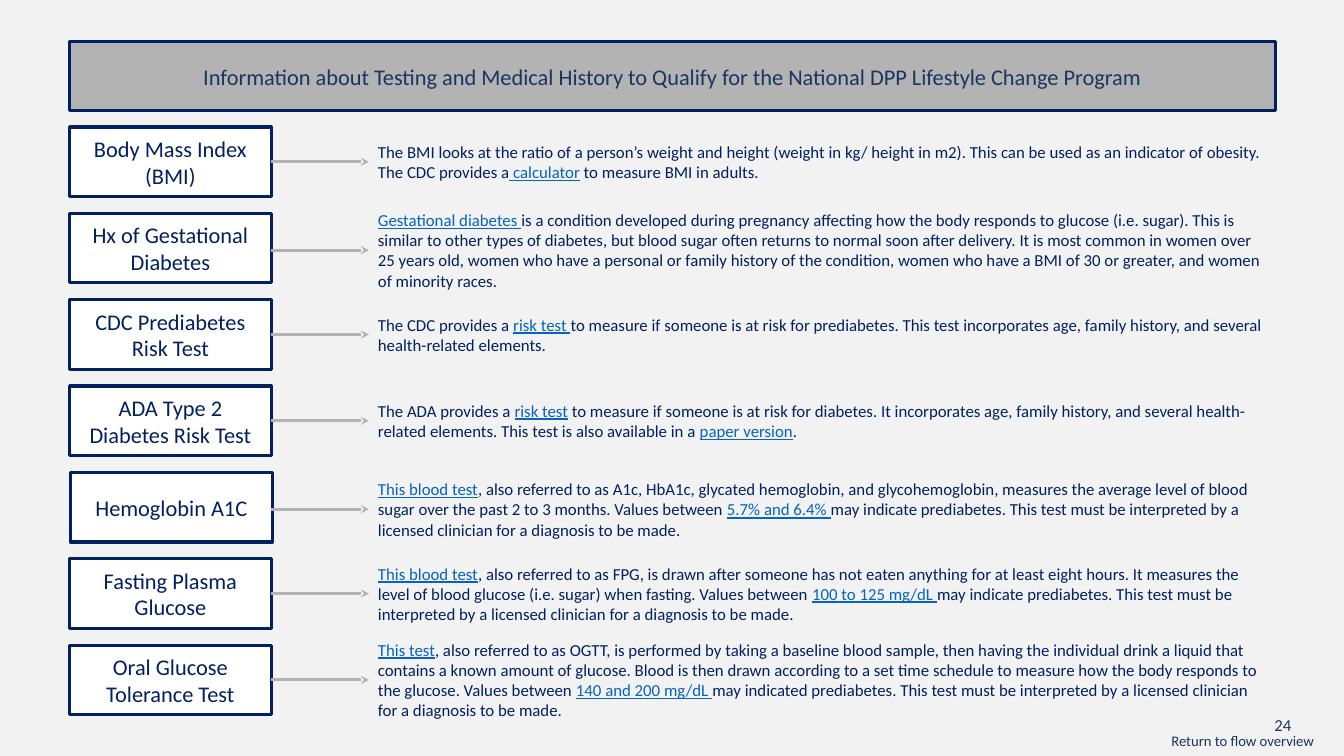
from lxml.etree import SubElement
from pptx import Presentation
from pptx.dml.color import RGBColor
from pptx.enum.shapes import MSO_CONNECTOR, MSO_SHAPE
from pptx.enum.text import MSO_ANCHOR, MSO_AUTO_SIZE, PP_ALIGN
from pptx.oxml.ns import qn
from pptx.util import Inches, Pt

COLORS = {
    "background": "F2F2F2",
    "navy": "002060",
    "title": "193560",
    "number": "203864",
    "gray": "B3B3B3",
    "white": "FFFFFF",
    "link": "0563C1",
}

LEFT, TOP, BOX_W, ROW_H = 0.69, 1.26, 2, 0.69
PITCH = (6.4 - TOP) / 6
TEXT_LEFT, TEXT_W = 3.65, 8.99

TITLE = "Information about Testing and Medical History to Qualify for the National DPP Lifestyle Change Program"

ROWS = [
    ("Body Mass Index (BMI)", 0, 0,
     "The BMI looks at the ratio of a person’s weight and height (weight in kg/ height in m2). "
     "This can be used as an indicator of obesity. The CDC provides a[ calculator] to measure BMI in adults."),
    ("Hx of Gestational Diabetes", 0, 0.02,
     "[Gestational diabetes ]is a condition developed during pregnancy affecting how the body responds "
     "to glucose (i.e. sugar). This is similar to other types of diabetes, but blood sugar often returns "
     "to normal soon after delivery. It is most common in women over 25 years old, women who have a "
     "personal or family history of the condition, women who have a BMI of 30 or greater, and women of "
     "minority races."),
    ("CDC Prediabetes Risk Test", 0, 0,
     "The CDC provides a [risk test ]to measure if someone is at risk for prediabetes. This test "
     "incorporates age, family history, and several health-related elements."),
    ("ADA Type 2 Diabetes Risk Test", 0, 0,
     "The ADA provides a [risk test] to measure if someone is at risk for diabetes. It incorporates age, "
     "family history, and several health-related elements. This test is also available in a [paper version]."),
    ("Hemoglobin A1C", 0.01, 0.02,
     "[This blood test], also referred to as A1c, HbA1c, glycated hemoglobin, and glycohemoglobin, "
     "measures the average level of blood sugar over the past 2 to 3 months. Values between "
     "[5.7% and 6.4% ]may indicate prediabetes. This test must be interpreted by a licensed clinician "
     "for a diagnosis to be made."),
    ("Fasting Plasma Glucose", 0, 0,
     "[This blood test], also referred to as FPG, is drawn after someone has not eaten anything for at "
     "least eight hours. It measures the level of blood glucose (i.e. sugar) when fasting. Values between "
     "[100 to 125 mg/dL ]may indicate prediabetes. This test must be interpreted by a licensed clinician "
     "for a diagnosis to be made."),
    ("Oral Glucose Tolerance Test", 0, 0,
     "[This test], also referred to as OGTT, is performed by taking a baseline blood sample, then having "
     "the individual drink a liquid that contains a known amount of glucose. Blood is then drawn according "
     "to a set time schedule to measure how the body responds to the glucose. Values between "
     "[140 and 200 mg/dL ]may indicated prediabetes. This test must be interpreted by a licensed clinician "
     "for a diagnosis to be made."),
]


class SlideBuilder:
    font = "Calibri"

    def __init__(self, s):
        self.s = s
        s.background.fill.solid()
        s.background.fill.fore_color.rgb = self.color("background")

    def color(self, name):
        return RGBColor.from_string(COLORS[name])

    def style(self, r, size, color):
        r.font.name = self.font
        r.font.size = Pt(size)
        r.font.color.rgb = self.color(color)

    def panel(self, sp, text, fill, color):
        sp.fill.solid()
        sp.fill.fore_color.rgb = self.color(fill)
        sp.line.color.rgb = self.color("navy")
        sp.line.width = Pt(2.25)
        tf = sp.text_frame
        tf.text = text
        tf.word_wrap = True
        tf.auto_size = MSO_AUTO_SIZE.NONE
        tf.vertical_anchor = MSO_ANCHOR.MIDDLE
        p = tf.paragraphs[0]
        p.alignment = PP_ALIGN.CENTER
        p.line_spacing = 1.0
        self.style(p.runs[0], 16, color)

    def title(self, x, y, w, h, text):
        sp = self.s.shapes.title
        sp.left, sp.top, sp.width, sp.height = map(Inches, (x, y, w, h))
        self.panel(sp, text, "gray", "title")

    def box(self, x, y, w, h, text):
        sp = self.s.shapes.add_shape(MSO_SHAPE.RECTANGLE, *map(Inches, (x, y, w, h)))
        sp.shadow.inherit = False
        self.panel(sp, text, "white", "navy")

    def description(self, x, y, w, h, text):
        tf = self.s.shapes.add_textbox(*map(Inches, (x, y, w, h))).text_frame
        tf.word_wrap = True
        tf.vertical_anchor = MSO_ANCHOR.MIDDLE
        p = tf.paragraphs[0]
        for i, part in enumerate(text.replace("]", "[").split("[")):
            if part:
                r = p.add_run()
                r.text = part
                is_link = i % 2 == 1
                self.style(r, 12, "link" if is_link else "navy")
                r.font.underline = is_link

    def label(self, x, y, w, h, text, size, color):
        tf = self.s.shapes.add_textbox(*map(Inches, (x, y, w, h))).text_frame
        tf.text = text
        tf.word_wrap = False
        self.style(tf.paragraphs[0].runs[0], size, color)

    def arrow(self, x1, x2, y):
        c = self.s.shapes.add_connector(MSO_CONNECTOR.STRAIGHT, *map(Inches, (x1, y, x2, y)))
        c.line.color.rgb = self.color("gray")
        c.line.width = Pt(2)
        SubElement(c.line._get_or_add_ln(), qn("a:tailEnd"), type="stealth")
        SubElement(c._element.spPr, qn("a:effectLst"))


def main():
    prs = Presentation()
    prs.slide_width, prs.slide_height = Inches(13.33), Inches(7.5)
    b = SlideBuilder(prs.slides.add_slide(prs.slide_layouts[5]))
    b.title(LEFT, 0.41, 11.96, ROW_H, TITLE)
    for i, (name, box_shift, text_shift, text) in enumerate(ROWS):
        y = TOP + i * PITCH
        b.box(LEFT + box_shift, y, BOX_W, ROW_H, name)
        b.description(TEXT_LEFT, y + text_shift, TEXT_W, ROW_H, text)
        b.arrow(LEFT + BOX_W, TEXT_LEFT + 0.01, y + text_shift + ROW_H / 2)
    b.label(12.54, 7.04, 0.4, 0.3, "24", 12, "number")
    b.label(11.52, 7.21, 1.64, 0.28, "Return to flow overview", 10.5, "title")
    prs.save("out.pptx")


if __name__ == "__main__":
    main()
